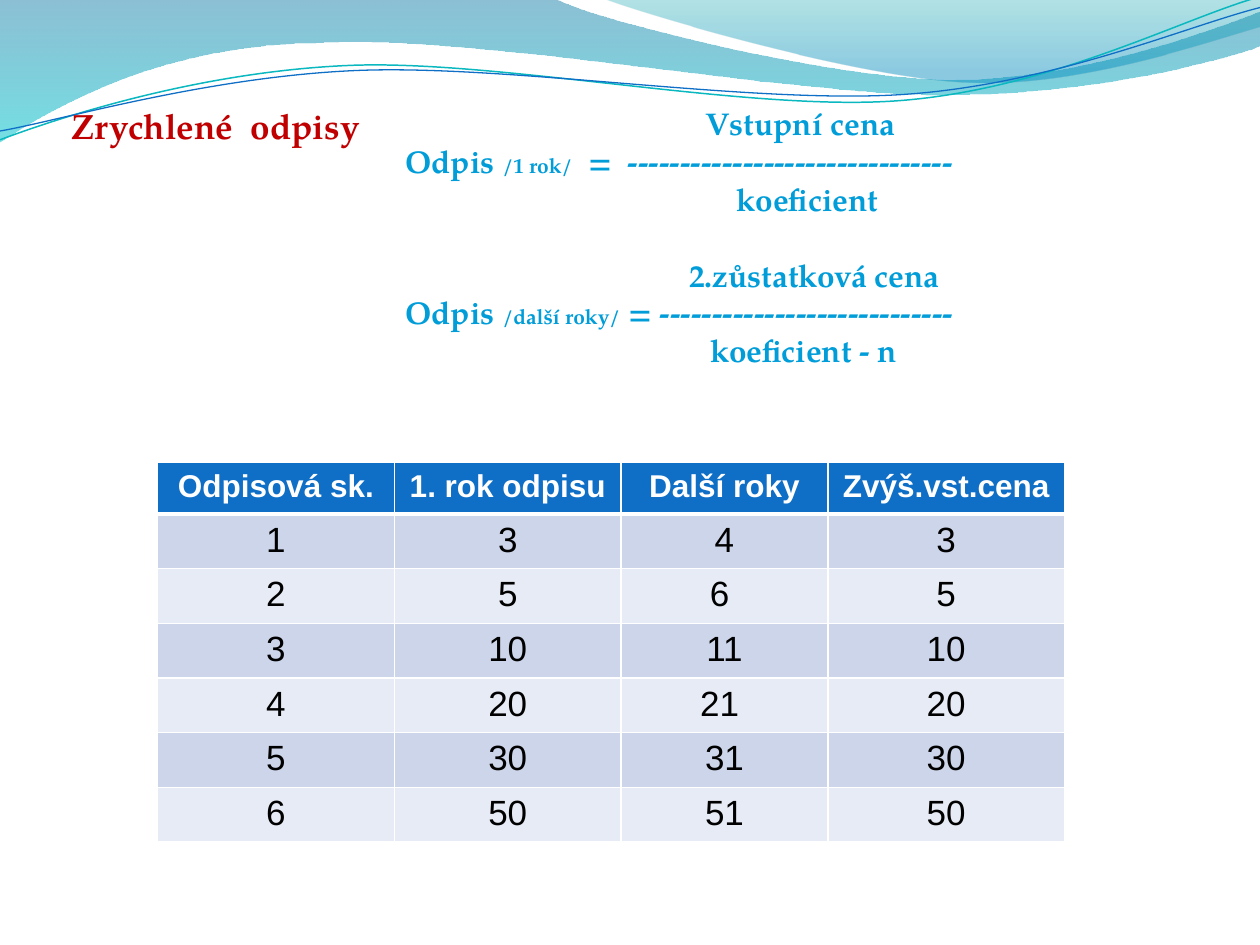
from dataclasses import dataclass

from lxml.etree import SubElement
from pptx import Presentation
from pptx.dml.color import RGBColor
from pptx.enum.text import PP_ALIGN
from pptx.oxml import parse_xml
from pptx.oxml.ns import nsdecls, qn
from pptx.util import Inches, Pt


@dataclass(frozen=True)
class Theme:
    """Colours, fonts and type sizes of the deck."""
    serif: str = "TeX Gyre Pagella"
    sans: str = "Arial"
    title: str = "C00000"
    formula: str = "009DD9"
    header: str = "0F6FC6"
    bands: tuple = ("CCD5EA", "E7EBF5")
    white: str = "FFFFFF"
    black: str = "000000"
    teal_line: str = "0AB8BF"
    wave: tuple = ((0, "0074A1", 45), (1, "00C6CF", 55))
    crest: tuple = ((0, "00A1A9", 30), (0.8, "008BBF", 45))
    large: int = 20
    normal: int = 18
    small: int = 12


def add_span(para, text, *, font, size, color, bold=False):
    """Append formatted text to a paragraph."""
    span = para.add_run()
    span.text = text
    span.font.name = font
    span.font.size = Pt(size)
    span.font.bold = bold
    span.font.color.rgb = RGBColor.from_string(color)


class SlideWriter:
    """Draws styled elements on the current slide."""

    def __init__(self, page, theme):
        self.page = page
        self.theme = theme

    def outline(self, segments, closed):
        """Build a freeform from a start, straight (x, y) and cubic (six number) segments."""
        points = [(round(values[i] * 1000), round(values[i + 1] * 1000))
                  for values in segments for i in range(0, len(values), 2)]
        builder = self.page.shapes.build_freeform(*points[0], scale=Inches(1) / 1000)
        builder.add_line_segments(points[1:], close=closed)
        shape = builder.convert_to_shape()
        shape.shadow.inherit = False
        lines = iter(shape.element.xpath(".//a:path/a:lnTo"))
        for values in segments[1:]:
            line = next(lines)
            if len(values) == 6:
                line.tag = qn("a:cubicBezTo")
                for _ in range(2):
                    extra = next(lines)
                    line.append(extra[0])
                    extra.getparent().remove(extra)
        return shape

    def wave(self, segments, stops):
        """Fill a closed outline with a translucent vertical gradient."""
        shape = self.outline(segments, True)
        shape.line.fill.background()
        shape.fill.gradient()
        shape.fill.gradient_angle = 270
        for stop, (position, color, _) in zip(shape.fill.gradient_stops, stops):
            stop.position = position
            stop.color.rgb = RGBColor.from_string(color)
        for tint, (_, _, opacity) in zip(shape.element.xpath(".//a:gs/a:srgbClr"), stops):
            SubElement(tint, qn("a:alpha")).set("val", str(opacity * 1000))

    def ribbon(self, segments, color, width):
        """Draw an open curved line."""
        shape = self.outline(segments, False)
        shape.fill.background()
        shape.line.color.rgb = RGBColor.from_string(color)
        shape.line.width = Pt(width)

    def text(self, left, top, width, height, paragraphs, color):
        """Write paragraphs given as (indent, space before, spans)."""
        box = self.page.shapes.add_textbox(*map(Inches, (left, top, width, height)))
        frame = box.text_frame
        frame.word_wrap = True
        for index, (indent, space, spans) in enumerate(paragraphs):
            para = frame.add_paragraph() if index else frame.paragraphs[0]
            if indent:
                para._p.get_or_add_pPr().set("marL", str(Inches(indent)))
            if space:
                para.space_before = Pt(space)
            for text, size in spans:
                add_span(para, text, font=self.theme.serif, size=size, color=color, bold=True)

    def cell(self, cell, text, *, fill, color, size, bold, top, bottom):
        """Fill one table cell and draw its borders."""
        cell.fill.solid()
        cell.fill.fore_color.rgb = RGBColor.from_string(fill)
        para = cell.text_frame.paragraphs[0]
        para.alignment = PP_ALIGN.CENTER
        add_span(para, text, font=self.theme.sans, size=size, color=color, bold=bold)
        properties = cell._tc.get_or_add_tcPr()
        for index, (side, width) in enumerate(zip("LRTB", (1, 1, top, bottom))):
            properties.insert(index, parse_xml(
                f'<a:ln{side} {nsdecls("a")} w="{Pt(width)}"><a:solidFill>'
                f'<a:srgbClr val="{self.theme.white}"/></a:solidFill></a:ln{side}>'))

    def table(self, left, top, widths, heights, rows):
        """Add a table with a header row and alternating bands."""
        theme = self.theme
        table = self.page.shapes.add_table(
            len(rows), len(widths), Inches(left), Inches(top),
            Inches(sum(widths)), Inches(sum(heights))).table
        for column, width in zip(table.columns, widths):
            column.width = Inches(width)
        for index, (row, height, values) in enumerate(zip(table.rows, heights, rows)):
            row.height = Inches(height)
            head = index == 0
            for cell, value in zip(row.cells, values):
                self.cell(cell, value, bold=head,
                          fill=theme.header if head else theme.bands[(index - 1) % 2],
                          color=theme.white if head else theme.black,
                          size=theme.normal if head else theme.large,
                          top=3 if index == 1 else 1, bottom=3 if head else 1)


def main():
    """Build the depreciation slide."""
    theme = Theme()
    deck = Presentation()
    deck.slide_width, deck.slide_height = Inches(10), Inches(7.5)
    writer = SlideWriter(deck.slides.add_slide(deck.slide_layouts[6]), theme)

    writer.wave([
        (0, -0.01), (4.4, -0.01), (4.76, 0.17, 6.64, 0.63, 7.58, 0.63),
        (8.53, 0.63, 9.58, 0.26, 10, 0.09), (10.01, 0.36),
        (9.83, 0.44, 8.7, 0.76, 7.46, 0.75), (6.22, 0.75, 3.82, 0.28, 2.57, 0.34),
        (1.29, 0.35, 0.46, 0.83, -0.01, 1.13)], theme.wave)
    writer.wave([
        (4.79, -0.01), (5.09, 0.11, 6.82, 0.62, 7.69, 0.65),
        (8.56, 0.69, 9.61, 0.32, 10, 0.21), (10, 0)], theme.crest)
    writer.ribbon([
        (0, 1.11), (0.48, 0.93, 1.58, 0.57, 2.77, 0.52),
        (3.95, 0.47, 5.93, 0.89, 7.13, 0.8), (8.33, 0.71, 9.38, 0.15, 9.98, -0.02)],
        theme.teal_line, 0.85)
    writer.ribbon([
        (0, 1.04), (0.47, 0.96, 1.64, 0.61, 2.83, 0.56),
        (4.03, 0.51, 5.97, 0.83, 7.17, 0.75), (8.36, 0.67, 9.41, 0.21, 10, 0.06)],
        theme.header, 0.75)

    normal, small = theme.normal, theme.small
    writer.text(0.47, 0.78, 2.52, 0.44,
                [(0, 0, [("Zrychlené  odpisy", theme.large)])], theme.title)
    writer.text(3.12, 0.78, 4.61, 2.22, [
        (2.38, 0, [("Vstupní cena", normal)]),
        (0, 0, [("Odpis ", normal), ("/1 rok/", small), ("  =  " + "-" * 31, normal)]),
        (2.63, 0, [("koeficient", normal)]),
        (2.25, 21.6, [("2.zůstatková cena", normal)]),
        (0, 0, [("Odpis ", normal), ("/další roky/", small), (" = " + "-" * 28, normal)]),
        (2.42, 0, [("koeficient - n", normal)]),
    ], theme.formula)

    writer.table(1.25, 3.67, (1.88, 1.8, 1.64, 1.88), [0.41] + [0.43] * 6, [
        ("Odpisová sk.", "1. rok odpisu", "Další roky", "Zvýš.vst.cena"),
        ("1", "3", "4", "3"),
        ("2", "5", "6 ", "5"),
        ("3", "10", "11", "10"),
        ("4", "20", "21 ", "20"),
        ("5", "30", "31", "30"),
        ("6", "50", "51", "50"),
    ])
    deck.save("out.pptx")


if __name__ == "__main__":
    main()
